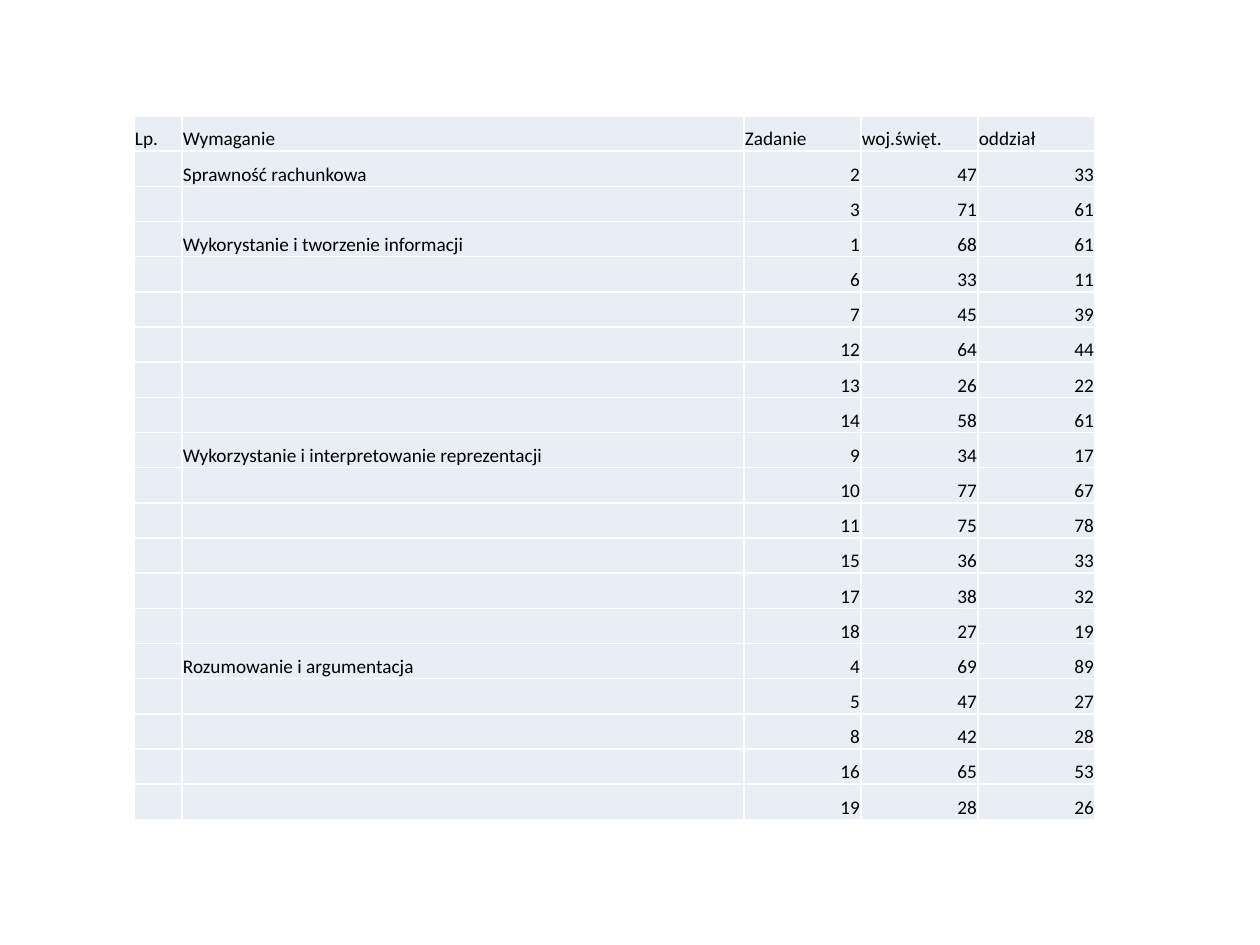
from dataclasses import dataclass

from lxml.etree import SubElement
from pptx import Presentation
from pptx.dml.color import RGBColor
from pptx.enum.text import MSO_ANCHOR, PP_ALIGN
from pptx.oxml.ns import qn
from pptx.util import Pt

PX = 914400 // 126  # EMU per px


@dataclass(frozen=True)
class Theme:
    font: str = "Calibri"
    size: int = 11
    text: str = "000000"
    cell: str = "E9EDF4"
    border: str = "FFFFFF"
    border_width: int = 1


THEME = Theme()

# Table geometry in px
LEFT, TOP, HEIGHT = 134, 116, 704
COLUMN_WIDTHS = [48, 562, 117, 117, 117]

HEADINGS = ["Lp.", "Wymaganie", "Zadanie", "woj.święt.", "oddział"]

# Requirement -> (task, voivodeship result, class result)
RESULTS = {
    "Sprawność rachunkowa": [(2, 47, 33), (3, 71, 61)],
    "Wykorystanie i tworzenie informacji": [
        (1, 68, 61), (6, 33, 11), (7, 45, 39),
        (12, 64, 44), (13, 26, 22), (14, 58, 61),
    ],
    "Wykorzystanie i interpretowanie reprezentacji": [
        (9, 34, 17), (10, 77, 67), (11, 75, 78),
        (15, 36, 33), (17, 38, 32), (18, 27, 19),
    ],
    "Rozumowanie i argumentacja": [
        (4, 69, 89), (5, 47, 27), (8, 42, 28), (16, 65, 53), (19, 28, 26),
    ],
}


def px(length):
    return length * PX


def table_rows():
    """Headings, then one row per task; a requirement shows on its first row."""
    rows = [HEADINGS]
    for requirement, tasks in RESULTS.items():
        for index, scores in enumerate(tasks):
            rows.append(["", "" if index else requirement, *scores])
    return rows


def add_borders(cell):
    properties = cell._tc.get_or_add_tcPr()
    for side in ("lnL", "lnR", "lnT", "lnB"):
        line = SubElement(properties, qn(f"a:{side}"), w=str(Pt(THEME.border_width)))
        fill = SubElement(line, qn("a:solidFill"))
        SubElement(fill, qn("a:srgbClr"), val=THEME.border)


def fill_cell(cell, value):
    # Box
    add_borders(cell)
    cell.fill.solid()
    cell.fill.fore_color.rgb = RGBColor.from_string(THEME.cell)
    cell.margin_left = cell.margin_right = cell.margin_top = px(1)
    cell.margin_bottom = 0
    cell.vertical_anchor = MSO_ANCHOR.BOTTOM

    # Text; an empty cell keeps the small size so that its row stays low
    paragraph = cell.text_frame.paragraphs[0]
    if value == "":
        SubElement(paragraph._p, qn("a:endParaRPr"), sz=str(THEME.size * 100))
        return
    paragraph.text = str(value)
    paragraph.alignment = PP_ALIGN.RIGHT if isinstance(value, int) else PP_ALIGN.LEFT
    font = paragraph.runs[0].font
    font.name = THEME.font
    font.size = Pt(THEME.size)
    font.color.rgb = RGBColor.from_string(THEME.text)


def add_results_table(slide, rows):
    table = slide.shapes.add_table(
        len(rows), len(COLUMN_WIDTHS),
        px(LEFT), px(TOP), px(sum(COLUMN_WIDTHS)), px(HEIGHT),
    ).table
    table.first_row = table.horz_banding = False
    for column, width in zip(table.columns, COLUMN_WIDTHS):
        column.width = px(width)
    for row, values in zip(table.rows, rows):
        row.height = px(HEIGHT) // len(rows)
        for cell, value in zip(row.cells, values):
            fill_cell(cell, value)


def main():
    presentation = Presentation()
    presentation.slide_width = px(1260)
    presentation.slide_height = px(945)
    blank_layout = presentation.slide_layouts[6]
    slide = presentation.slides.add_slide(blank_layout)
    add_results_table(slide, table_rows())
    presentation.save("out.pptx")


if __name__ == "__main__":
    main()
